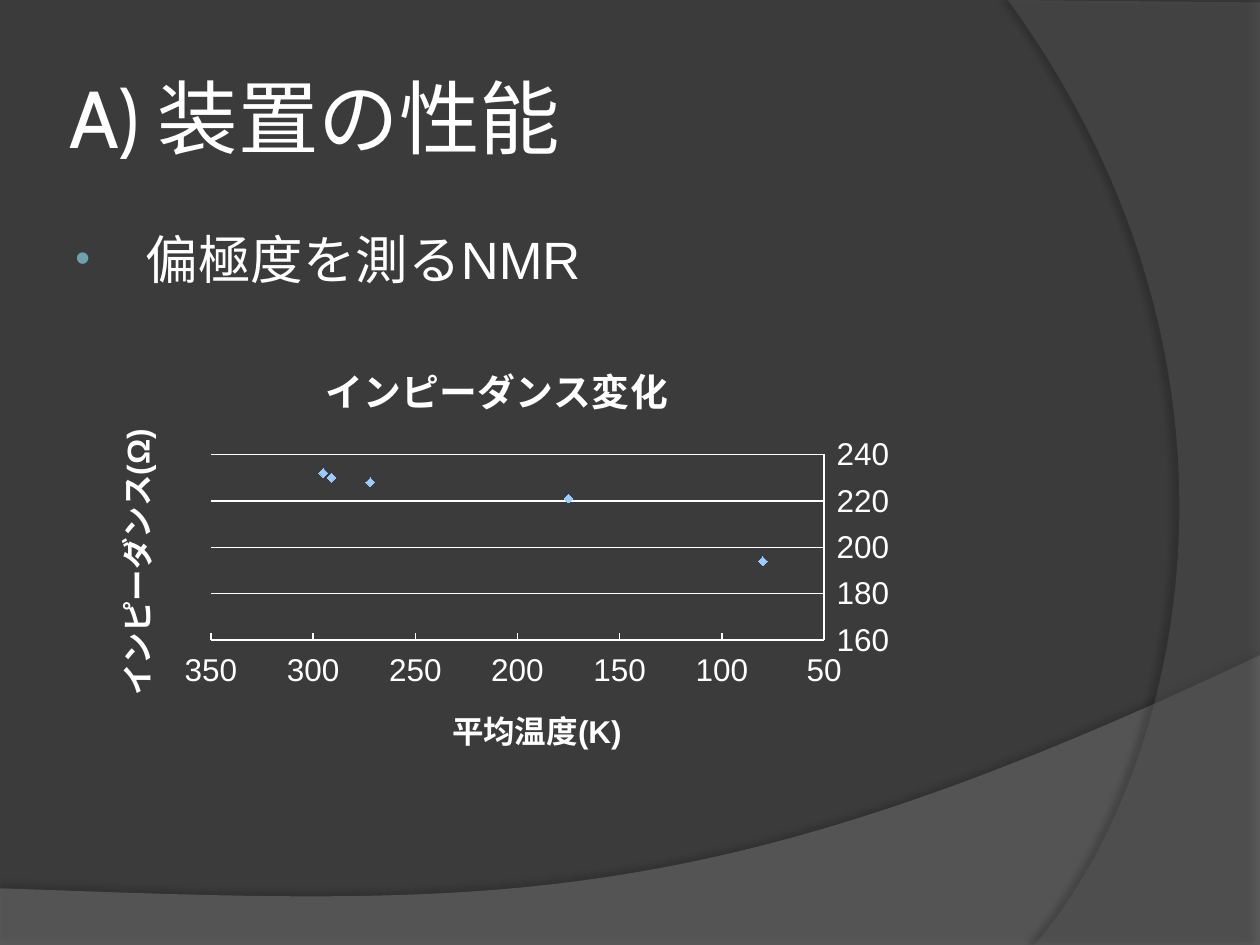
import lxml.etree
import pptx
import pptx.chart.data
import pptx.dml.color
import pptx.enum.chart
import pptx.enum.text
import pptx.oxml
import pptx.oxml.ns
import pptx.util
from pptx.util import Inches

WHITE = "FFFFFF"
DRAWING = 'xmlns:a="http://schemas.openxmlformats.org/drawingml/2006/main"'


def color(hex_string):
    return pptx.dml.color.RGBColor.from_string(hex_string)


def write_text(text_frame, text, size=18, font="Arial", bold=False):
    paragraph = text_frame.paragraphs[0]
    run = paragraph.add_run()
    run.text = text
    run.font.size = pptx.util.Pt(size)
    run.font.name = font
    run.font.bold = bold
    run.font.color.rgb = color(WHITE)
    return paragraph


presentation = pptx.Presentation()
presentation.slide_width = Inches(10)
presentation.slide_height = Inches(7.5)
slide = presentation.slides.add_slide(presentation.slide_layouts[6])
slide.background.fill.solid()
slide.background.fill.fore_color.rgb = color("3B3B3B")

# Background waves: straight corners, then one Bezier curve that closes the outline
waves = [
    dict(corners=[(0, 7.05), (0, 7.51), (10, 7.51)],
         curve=[(10, 5.2), (5.59, 7.29), (3.91, 7.19), (0, 7.05)],
         fill="7F7F7F", opacity=45, shadow_opacity=35, blur=4, distance=3.5, direction=270),
    dict(corners=[(10, 0.02), (10, 7.5)],
         curve=[(8.21, 7.5), (9.35, 6.19), (10.18, 3), (8, 0)],
         fill="5E5E5E", opacity=40, shadow_opacity=45, blur=4, distance=4, direction=180),
]
STEPS = 60
for wave in waves:
    points = list(wave["corners"])
    for step in range(STEPS + 1):
        t = step / STEPS
        weights = [(1 - t) ** 3, 3 * t * (1 - t) ** 2, 3 * t ** 2 * (1 - t), t ** 3]
        points.append(tuple(sum(weight * point[axis] for weight, point in zip(weights, wave["curve"]))
                            for axis in (0, 1)))
    points = [(Inches(x), Inches(y)) for x, y in points]
    builder = slide.shapes.build_freeform(*points[0])
    builder.add_line_segments(points[1:], close=True)
    shape = builder.convert_to_shape()
    shape.line.fill.background()
    shape.fill.solid()
    shape.fill.fore_color.rgb = color(wave["fill"])
    fill_color = shape.fill._xPr.find(".//" + pptx.oxml.ns.qn("a:srgbClr"))
    lxml.etree.SubElement(fill_color, pptx.oxml.ns.qn("a:alpha"), val=str(wave["opacity"] * 1000))
    shape._element.spPr.append(pptx.oxml.parse_xml(
        f'<a:effectLst {DRAWING}><a:outerShdw blurRad="{pptx.util.Pt(wave["blur"])}" '
        f'dist="{pptx.util.Pt(wave["distance"])}" dir="{wave["direction"] * 60000}" algn="ctr" '
        f'rotWithShape="0"><a:srgbClr val="000000"><a:alpha val="{wave["shadow_opacity"] * 1000}"/>'
        '</a:srgbClr></a:outerShdw></a:effectLst>'))

# Title
title_frame = slide.shapes.add_textbox(Inches(0.5), Inches(0.3), Inches(8.17), Inches(1.25)).text_frame
title_frame.word_wrap = True
title_frame.vertical_anchor = pptx.enum.text.MSO_ANCHOR.MIDDLE
title_frame.margin_left = title_frame.margin_right = Inches(0.05)
write_text(title_frame, "A) 装置の性能", size=46, font="Cabin")

# Bulleted line
body_frame = slide.shapes.add_textbox(Inches(0.5), Inches(1.75), Inches(9.34), Inches(4.95)).text_frame
body_frame.word_wrap = True
paragraph = write_text(body_frame, "偏極度を測るNMR", size=30)
paragraph.space_before = pptx.util.Pt(6)
properties = paragraph._p.get_or_add_pPr()
properties.set("marL", str(Inches(0.56)))
properties.set("indent", str(Inches(-0.56)))
for bullet_xml in (f'<a:buClr {DRAWING}><a:srgbClr val="6EA0B0"/></a:buClr>',
                   f'<a:buSzPct {DRAWING} val="80000"/>',
                   f'<a:buFont {DRAWING} typeface="Arial"/>',
                   f'<a:buChar {DRAWING} char="•"/>'):
    properties.append(pptx.oxml.parse_xml(bullet_xml))

# Impedance chart
chart_data = pptx.chart.data.XyChartData()
impedance = chart_data.add_series("Series 1")
for temperature, ohms in [(295, 232), (291, 230), (272, 228), (175, 221), (80, 194)]:
    impedance.add_data_point(temperature, ohms)
chart = slide.shapes.add_chart(pptx.enum.chart.XL_CHART_TYPE.XY_SCATTER, Inches(0.7), Inches(2.66),
                               Inches(6.49), Inches(3.51), chart_data).chart
chart.has_legend = False
chart.font.size = pptx.util.Pt(18)
chart.font.name = "Arial"
chart.font.color.rgb = color(WHITE)
chart.has_title = True
write_text(chart.chart_title.text_frame, "インピーダンス変化", size=21.6, bold=True)

axes = [
    (chart.category_axis, "平均温度(K)", 50, 350, 50, pptx.enum.chart.XL_TICK_MARK.INSIDE),
    (chart.value_axis, "インピーダンス(Ω)", 160, 240, 20, pptx.enum.chart.XL_TICK_MARK.NONE),
]
for axis, axis_title, minimum, maximum, unit, tick_mark in axes:
    write_text(axis.axis_title.text_frame, axis_title, bold=True)
    axis.minimum_scale = minimum
    axis.maximum_scale = maximum
    axis.major_unit = unit
    axis.major_tick_mark = tick_mark
    axis.minor_tick_mark = pptx.enum.chart.XL_TICK_MARK.NONE
    axis.tick_label_position = pptx.enum.chart.XL_TICK_LABEL_POSITION.LOW
    axis.tick_labels.number_format = "General"
    axis.tick_labels.number_format_is_linked = False
    axis.format.line.color.rgb = color(WHITE)
    axis.format.line.width = pptx.util.Pt(0.75)
chart.category_axis.reverse_order = True
chart.category_axis.has_major_gridlines = False
chart.value_axis.has_major_gridlines = True
gridline = chart.value_axis.major_gridlines.format.line
gridline.color.rgb = color(WHITE)
gridline.width = pptx.util.Pt(0.75)

# Points without a joining line
series = chart.plots[0].series[0]
chart.plots[0].vary_by_categories = False
series.smooth = False
series.format.line.fill.background()
series.marker.style = pptx.enum.chart.XL_MARKER_STYLE.DIAMOND
series.marker.size = 5
series.marker.format.fill.solid()
series.marker.format.fill.fore_color.rgb = color("99CCFF")
series.marker.format.line.fill.background()

# Fixed inner plot area, as fractions of the chart
plot_area = chart._chartSpace.chart.plotArea
for old_layout in plot_area.findall(pptx.oxml.ns.qn("c:layout")):
    plot_area.remove(old_layout)
plot_area.insert(0, pptx.oxml.parse_xml(
    '<c:layout xmlns:c="http://schemas.openxmlformats.org/drawingml/2006/chart"><c:manualLayout>'
    '<c:layoutTarget val="inner"/><c:xMode val="edge"/><c:yMode val="edge"/>'
    '<c:x val="0.15"/><c:y val="0.27"/><c:w val="0.75"/><c:h val="0.42"/>'
    '</c:manualLayout></c:layout>'))

presentation.save("out.pptx")
